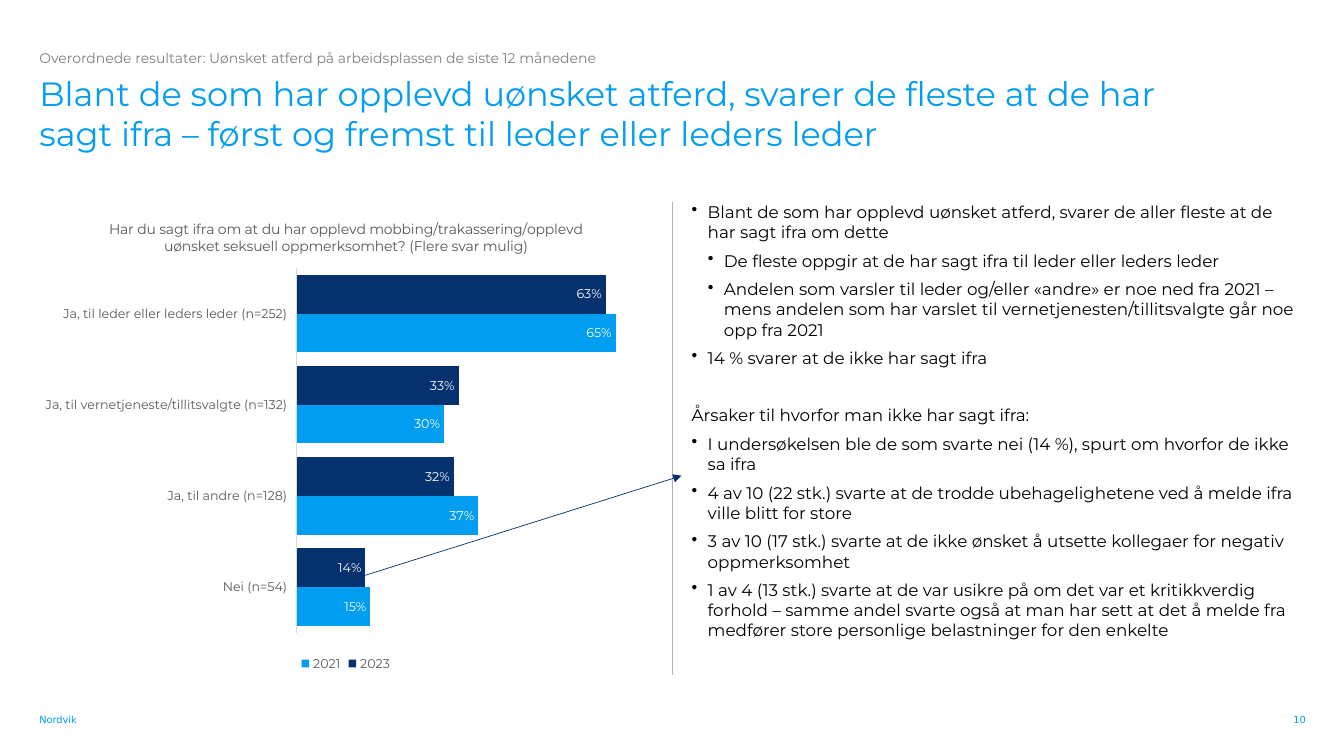
from dataclasses import dataclass

from lxml.etree import SubElement
from pptx import Presentation
from pptx.chart.chart import Chart
from pptx.chart.data import CategoryChartData
from pptx.dml.color import RGBColor
from pptx.enum.chart import (XL_CHART_TYPE, XL_LABEL_POSITION, XL_LEGEND_POSITION,
                             XL_TICK_LABEL_POSITION, XL_TICK_MARK)
from pptx.enum.shapes import MSO_CONNECTOR
from pptx.enum.text import MSO_ANCHOR, PP_ALIGN
from pptx.oxml import parse_xml
from pptx.oxml.ns import nsdecls, qn
from pptx.slide import Slide
from pptx.text.text import Font, TextFrame
from pptx.util import Inches, Pt

SLIDE_WIDTH, SLIDE_HEIGHT = Inches(13.33), Inches(7.5)
BLUE = RGBColor(0x00, 0x9D, 0xF0)
NAVY = RGBColor(0x05, 0x32, 0x6E)
BLACK = RGBColor(0x00, 0x00, 0x00)
WHITE = RGBColor(0xFF, 0xFF, 0xFF)
GREY = RGBColor(0x80, 0x80, 0x80)
DARK_GREY = RGBColor(0x59, 0x59, 0x59)
RULE_GREY = RGBColor(0xB1, 0xB2, 0xB3)
AXIS_GREY = RGBColor(0xD9, 0xD9, 0xD9)
BODY_FONT, FOOTER_FONT = "Montserrat", "DejaVu Sans"
MARGIN, CONTENT_TOP, COLUMN_WIDTH, CONTENT_HEIGHT = 2.93, 26.67, 45.61, 62.67
BULLET_INDENT = Inches(0.16)


def across(percent: float) -> int:
    return round(SLIDE_WIDTH * percent / 100)


def down(percent: float) -> int:
    return round(SLIDE_HEIGHT * percent / 100)


@dataclass(frozen=True)
class Area:
    left: float
    top: float
    width: float
    height: float

    def placed(self) -> tuple[int, int, int, int]:
        return across(self.left), down(self.top), across(self.width), down(self.height)


@dataclass(frozen=True)
class Label:
    text: str
    area: Area
    size: float
    color: RGBColor
    font: str = BODY_FONT
    anchor: MSO_ANCHOR = MSO_ANCHOR.TOP
    align: PP_ALIGN = PP_ALIGN.LEFT


@dataclass(frozen=True)
class Point:
    text: str
    level: int = 1
    before: float = 0


@dataclass(frozen=True)
class Stroke:
    start: tuple[float, float]
    end: tuple[float, float]
    color: RGBColor
    arrow: bool = False


@dataclass(frozen=True)
class Year:
    name: str
    shares: tuple[float, ...]
    color: RGBColor


LABELS = (
    Label("Nordvik", Area(MARGIN, 92.8, 6.38, 3.2), 7, BLUE, FOOTER_FONT, MSO_ANCHOR.BOTTOM),
    Label("10", Area(91.97, 94.4, 5.18, 1.6), 7, BLUE, FOOTER_FONT,
          MSO_ANCHOR.BOTTOM, PP_ALIGN.RIGHT),
    Label("Overordnede resultater: Uønsket atferd på arbeidsplassen de siste 12 månedene",
          Area(MARGIN, 6.53, 47.04, 2.27), 10, GREY),
    Label("Blant de som har opplevd uønsket atferd, svarer de fleste at de har sagt ifra – "
          "først og fremst til leder eller leders leder",
          Area(MARGIN, 9.6, 85.97, 13.6), 24, BLUE),
)
POINTS = (
    Point("Blant de som har opplevd uønsket atferd, svarer de aller fleste at de har sagt "
          "ifra om dette"),
    Point("De fleste oppgir at de har sagt ifra til leder eller leders leder", 2),
    Point("Andelen som varsler til leder og/eller «andre» er noe ned fra 2021 – mens andelen "
          "som har varslet til vernetjenesten/tillitsvalgte går noe opp fra 2021", 2),
    Point("14 % svarer at de ikke har sagt ifra"),
    Point("Årsaker til hvorfor man ikke har sagt ifra:", 0, 20.5),
    Point("I undersøkelsen ble de som svarte nei (14 %), spurt om hvorfor de ikke sa ifra"),
    Point("4 av 10 (22 stk.) svarte at de trodde ubehagelighetene ved å melde ifra ville "
          "blitt for store"),
    Point("3 av 10 (17 stk.) svarte at de ikke ønsket å utsette kollegaer for negativ "
          "oppmerksomhet"),
    Point("1 av 4 (13 stk.) svarte at de var usikre på om det var et kritikkverdig forhold – "
          "samme andel svarte også at man har sett at det å melde fra medfører store "
          "personlige belastninger for den enkelte"),
)
STROKES = (
    Stroke((50.04, CONTENT_TOP), (50.04, CONTENT_TOP + CONTENT_HEIGHT), RULE_GREY),
    Stroke((26.41, 76.53), (50.71, 62.93), NAVY, arrow=True),
)
QUESTION = ("Har du sagt ifra om at du har opplevd mobbing/trakassering/opplevd uønsket "
            "seksuell oppmerksomhet? (Flere svar mulig)")
ANSWERS = ("Ja, til leder eller leders leder (n=252)",
           "Ja, til vernetjeneste/tillitsvalgte (n=132)",
           "Ja, til andre (n=128)", "Nei (n=54)")
YEARS = (Year("2023", (0.63, 0.33, 0.32, 0.14), NAVY),
         Year("2021", (0.65, 0.30, 0.37, 0.15), BLUE))
PLOT = {"x": 0.42, "y": 0.14, "w": 0.56, "h": 0.77}


def style(font: Font, size: float, color: RGBColor, name: str = BODY_FONT) -> None:
    font.size, font.name, font.bold = Pt(size), name, False
    font.color.rgb = color


def add_text_frame(slide: Slide, area: Area) -> TextFrame:
    frame = slide.shapes.add_textbox(*area.placed()).text_frame
    frame.word_wrap = True
    frame.margin_left = frame.margin_right = frame.margin_top = frame.margin_bottom = 0
    return frame


def add_label(slide: Slide, label: Label) -> None:
    frame = add_text_frame(slide, label.area)
    frame.vertical_anchor = label.anchor
    frame.text = label.text
    frame.paragraphs[0].alignment = label.align
    style(frame.paragraphs[0].runs[0].font, label.size, label.color, label.font)


def add_points(slide: Slide, points: tuple[Point, ...], area: Area) -> None:
    frame = add_text_frame(slide, area)
    frame.text = "\n".join(point.text for point in points)
    for paragraph, point in zip(frame.paragraphs, points):
        paragraph.space_before, paragraph.space_after = Pt(point.before), Pt(6)
        style(paragraph.runs[0].font, 12, BLACK)
        if point.level:
            paragraph.level = point.level - 1
            properties = paragraph.runs[0].font._element.getparent().getparent().get_or_add_pPr()
            properties.set("marL", str(BULLET_INDENT * point.level))
            properties.set("indent", str(-BULLET_INDENT))
            SubElement(properties, qn("a:buChar"), char="•")


def add_stroke(slide: Slide, stroke: Stroke) -> None:
    (x1, y1), (x2, y2) = stroke.start, stroke.end
    connector = slide.shapes.add_connector(
        MSO_CONNECTOR.STRAIGHT, across(x1), down(y1), across(x2), down(y2))
    connector.line.color.rgb = stroke.color
    connector.line.width = Pt(0.5)
    properties = connector.element.spPr
    if stroke.arrow:
        SubElement(properties.find(qn("a:ln")), qn("a:tailEnd"), type="triangle")
    SubElement(properties, qn("a:effectLst"))


def fix_plot(chart: Chart) -> None:
    plot_area = chart.element.find(".//" + qn("c:plotArea"))
    for automatic in plot_area.findall(qn("c:layout")):
        plot_area.remove(automatic)
    sizes = "".join(f'<c:{key} val="{value}"/>' for key, value in PLOT.items())
    plot_area.insert(0, parse_xml(
        f'<c:layout {nsdecls("c")}><c:manualLayout><c:layoutTarget val="inner"/>'
        f'<c:xMode val="edge"/><c:yMode val="edge"/>{sizes}</c:manualLayout></c:layout>'))


def add_answers_chart(slide: Slide, years: tuple[Year, ...], area: Area) -> None:
    data = CategoryChartData(number_format="0%")
    data.categories = ANSWERS
    for year in years:
        data.add_series(year.name, year.shares)
    chart = slide.shapes.add_chart(XL_CHART_TYPE.BAR_CLUSTERED, *area.placed(), data).chart
    style(chart.font, 10, BLACK)
    chart.has_title = True
    chart.chart_title.text_frame.text = QUESTION
    style(chart.chart_title.text_frame.paragraphs[0].runs[0].font, 10, DARK_GREY)
    chart.has_legend = True
    chart.legend.position = XL_LEGEND_POSITION.BOTTOM
    chart.legend.include_in_layout = False
    style(chart.legend.font, 9, DARK_GREY)
    answers, shares = chart.category_axis, chart.value_axis
    answers.reverse_order = True
    answers.major_tick_mark = answers.minor_tick_mark = XL_TICK_MARK.NONE
    answers.tick_label_position = XL_TICK_LABEL_POSITION.LOW
    answers.format.line.color.rgb = AXIS_GREY
    answers.format.line.width = Pt(0.75)
    style(answers.tick_labels.font, 9, DARK_GREY)
    shares.minimum_scale, shares.maximum_scale = 0, 0.7
    shares.has_major_gridlines = shares.visible = False
    plot = chart.plots[0]
    plot.gap_width, plot.overlap, plot.vary_by_categories = 35, 0, False
    for series, year in zip(plot.series, years):
        series.format.fill.solid()
        series.format.fill.fore_color.rgb = year.color
        labels = series.data_labels
        labels.show_value = True
        labels.position = XL_LABEL_POSITION.INSIDE_END
        labels.number_format, labels.number_format_is_linked = "0%", False
        style(labels.font, 9, WHITE)
    fix_plot(chart)


def main() -> None:
    deck = Presentation()
    deck.slide_width, deck.slide_height = SLIDE_WIDTH, SLIDE_HEIGHT
    slide = deck.slides.add_slide(deck.slide_layouts[6])
    add_answers_chart(slide, YEARS, Area(MARGIN, CONTENT_TOP, COLUMN_WIDTH, CONTENT_HEIGHT))
    add_points(slide, POINTS, Area(51.46, CONTENT_TOP, COLUMN_WIDTH, CONTENT_HEIGHT))
    for stroke in STROKES:
        add_stroke(slide, stroke)
    for label in LABELS:
        add_label(slide, label)
    deck.save("out.pptx")


if __name__ == "__main__":
    main()
